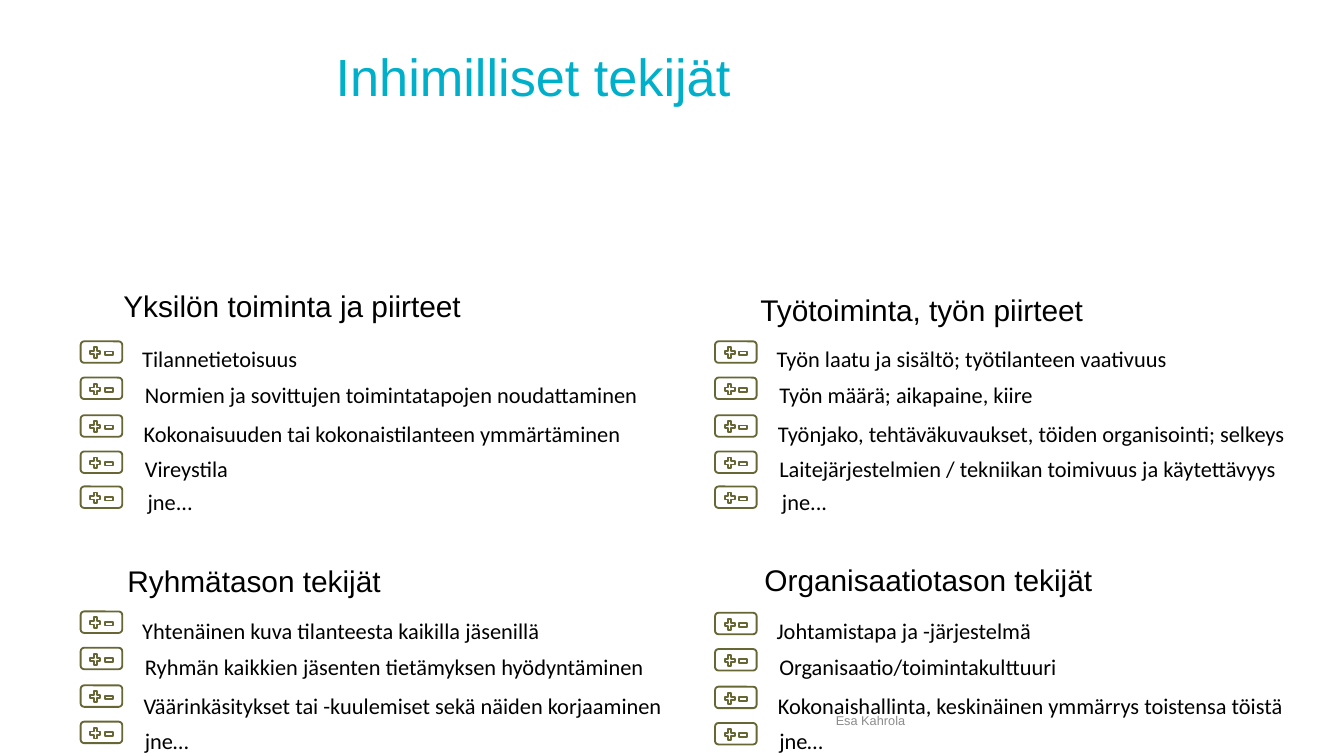
from pptx import Presentation
from pptx.dml.color import RGBColor
from pptx.enum.shapes import MSO_SHAPE as Preset
from pptx.enum.text import MSO_ANCHOR as Anchor, MSO_AUTO_SIZE as AutoSize
from pptx.util import Inches, Pt

COLORS = {"title": "00B0CA", "text": "000000", "icon": "676736", "footer": "8C8C8C"}

# Offsets of successive rows from the first row of a group
ICON_ROWS = (0, 0.27, 0.55, 0.82, 1.08)
TEXT_ROWS = (0, 0.27, 0.56, 0.82, 1.06)
TEXT_INDENTS = (0, 0.02, 0.01, 0.02, 0.04)

# Heading (text, left, top, width), icon left, icon top, text top, items (text, width)
GROUPS = (
    (("Yksilön toiminta ja piirteet", 0.82, 2.09, 2.74), 0.6, 2.54, 2.52, (
        ("Tilannetietoisuus", 1.37),
        ("Normien ja sovittujen toimintatapojen noudattaminen", 3.91),
        ("Kokonaisuuden tai kokonaistilanteen ymmärtäminen", 3.79),
        ("Vireystila", 0.83),
        ("jne...", 0.54),
    )),
    (("Työtoiminta, työn piirteet", 5.56, 2.12, 2.64), 5.32, 2.54, 2.52, (
        ("Työn laatu ja sisältö; työtilanteen vaativuus", 3.14),
        ("Työn määrä; aikapaine, kiire", 2.11),
        ("Työnjako, tehtäväkuvaukset, töiden organisointi; selkeys", 4.01),
        ("Laitejärjestelmien / tekniikan toimivuus ja käytettävyys", 3.94),
        ("jne...", 0.54),
    )),
    (("Ryhmätason tekijät", 0.85, 4.14, 2.11), 0.6, 4.55, 4.54, (
        ("Yhtenäinen kuva tilanteesta kaikilla jäsenillä", 3.19),
        ("Ryhmän kaikkien jäsenten tietämyksen hyödyntäminen", 3.95),
        ("Väärinkäsitykset tai -kuulemiset sekä näiden korjaaminen", 4.06),
        ("jne…", 0.53),
    )),
    (("Organisaatiotason tekijät", 5.59, 4.13, 2.67), 5.32, 4.56, 4.54, (
        ("Johtamistapa ja -järjestelmä", 2.12),
        ("Organisaatio/toimintakulttuuri", 2.29),
        ("Kokonaishallinta, keskinäinen ymmärrys toistensa töistä", 4),
        ("jne…", 0.53),
    )),
)


class SlideBuilder:
    def __init__(self, slide):
        self.slide = slide

    def text(self, text, left, top, width, height=0.3, *, font="Calibri", size=12,
             color="text", wrap=False, anchor=Anchor.TOP, line_spacing=None):
        box = self.slide.shapes.add_textbox(
            Inches(left), Inches(top), Inches(width), Inches(height))
        frame = box.text_frame
        frame.word_wrap = wrap
        frame.auto_size = AutoSize.NONE if wrap else AutoSize.SHAPE_TO_FIT_TEXT
        frame.vertical_anchor = anchor
        para = frame.paragraphs[0]
        if line_spacing:
            para.line_spacing = line_spacing
        span = para.add_run()
        span.text = text
        span.font.name = font
        span.font.size = Pt(size)
        span.font.color.rgb = RGBColor.from_string(COLORS[color])

    def outline(self, preset, left, top, width, height):
        shape = self.slide.shapes.add_shape(
            preset, Inches(left), Inches(top), Inches(width), Inches(height))
        shape.shadow.inherit = False
        shape.fill.background()
        shape.line.color.rgb = RGBColor.from_string(COLORS["icon"])
        shape.line.width = Pt(1)

    def plus_minus_icon(self, left, top):
        self.outline(Preset.ROUNDED_RECTANGLE, left, top, 0.31, 0.16)
        self.outline(Preset.MATH_PLUS, left + 0.06, top + 0.03, 0.1, 0.11)
        self.outline(Preset.MATH_MINUS, left + 0.17, top + 0.03, 0.08, 0.12)

    def group(self, heading, icon_left, icon_top, text_top, items):
        self.text(*heading, height=0.37, font="Arial", size=16)
        rows = zip(items, ICON_ROWS, TEXT_ROWS, TEXT_INDENTS)
        for (label, width), icon_row, text_row, indent in rows:
            self.plus_minus_icon(icon_left, icon_top + icon_row)
            self.text(label, icon_left + 0.36 + indent, text_top + text_row, width)


def main():
    deck = Presentation()
    deck.slide_width = Inches(10)
    deck.slide_height = deck.slide_width * 9 // 16
    page = SlideBuilder(deck.slides.add_slide(deck.slide_layouts[6]))
    page.text("Inhimilliset tekijät", 2.4, 0.34, 7.24, 0.5, font="Arial", size=28,
              color="title", wrap=True, anchor=Anchor.MIDDLE, line_spacing=0.9)
    for group in GROUPS:
        page.group(*group)
    page.text("Esa Kahrola", 6.12, 5.21, 3.19, font="Arial", size=6.8,
              color="footer", wrap=True, anchor=Anchor.MIDDLE)
    deck.save("out.pptx")


if __name__ == "__main__":
    main()
